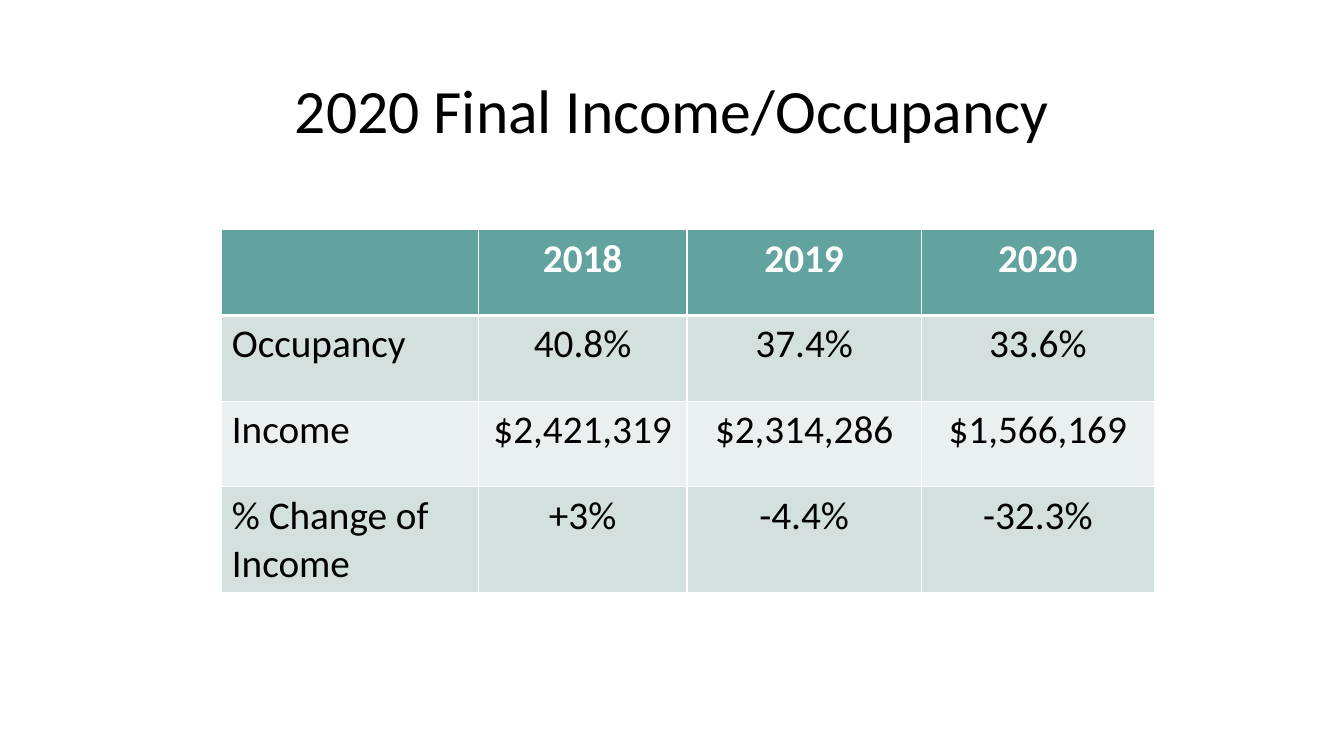
import pptx
import pptx.util
import pptx.dml.color
import pptx.enum.text
import pptx.oxml
import pptx.oxml.ns

WIDE, HIGH = 13.33, 7.5
FONT = "Calibri"
COLS = [2.54, 2.07, 2.32, 2.31]
FILLS = ["62A39F", "D3E0DF", "EAF0F0", "D3E0DF"]
DATA = [
    ["", "2018", "2019", "2020"],
    ["Occupancy", "40.8%", "37.4%", "33.6%"],
    ["Income", "$2,421,319", "$2,314,286", "$1,566,169"],
    ["% Change of Income", "+3%", "-4.4%", "-32.3%"],
]
ALIGN = pptx.enum.text.PP_ALIGN
inch = pptx.util.Inches


def paint(part, code):
    """Give a font or a fill a solid colour from a hex string."""
    if hasattr(part, "solid"):
        part.solid()
        part.fore_color.rgb = pptx.dml.color.RGBColor.from_string(code)
    else:
        part.color.rgb = pptx.dml.color.RGBColor.from_string(code)


def write(para, text, size, code, bold, align):
    """Add one formatted run to a paragraph."""
    para.alignment = align
    run = para.add_run()
    run.text = text
    run.font.name = FONT
    run.font.size = pptx.util.Pt(size)
    run.font.bold = bold
    paint(run.font, code)


def edge(cell, sides):
    """Draw white cell borders of the given widths in points."""
    props = cell._tc.get_or_add_tcPr()
    for spot, (side, width) in enumerate(sides.items()):
        line = pptx.oxml.parse_xml(
            f'<a:ln{side} {pptx.oxml.ns.nsdecls("a")} w="{pptx.util.Pt(width)}">'
            '<a:solidFill><a:srgbClr val="FFFFFF"/></a:solidFill>'
            f'</a:ln{side}>')
        props.insert(spot, line)


def head(slide, box):
    """Place the slide title in its box."""
    title = slide.shapes.title
    title.left, title.top, title.width, title.height = map(inch, box)
    frame = title.text_frame
    frame.word_wrap = True
    frame.vertical_anchor = pptx.enum.text.MSO_ANCHOR.MIDDLE
    para = frame.paragraphs[0]
    para.line_spacing = 0.9
    write(para, "2020 Final Income/Occupancy", 44, "000000", False, ALIGN.CENTER)


def grid(slide, box):
    """Place the income table in its box."""
    table = slide.shapes.add_table(len(DATA), len(COLS), *map(inch, box)).table
    for col, width in zip(table.columns, COLS):
        col.width = inch(box[2] * width / sum(COLS))
    for r, texts in enumerate(DATA):
        for c, text in enumerate(texts):
            cell = table.cell(r, c)
            paint(cell.fill, FILLS[r])
            edge(cell, {"L": 1, "R": 1, "T": 3 if r == 1 else 1,
                        "B": 3 if r == 0 else 1})
            if text:
                write(cell.text_frame.paragraphs[0], text, 28,
                      "000000" if r else "FFFFFF", r == 0,
                      ALIGN.CENTER if c else ALIGN.LEFT)


def main():
    """Build and save the slide."""
    deck = pptx.Presentation()
    deck.slide_width, deck.slide_height = inch(WIDE), inch(HIGH)
    slide = deck.slides.add_slide(deck.slide_layouts[5])
    head(slide, (0.92, 0.4, 11.5, 1.45))
    grid(slide, (2.2, 2.28, 9.25, 3.4))
    deck.save("out.pptx")


if __name__ == "__main__":
    main()
